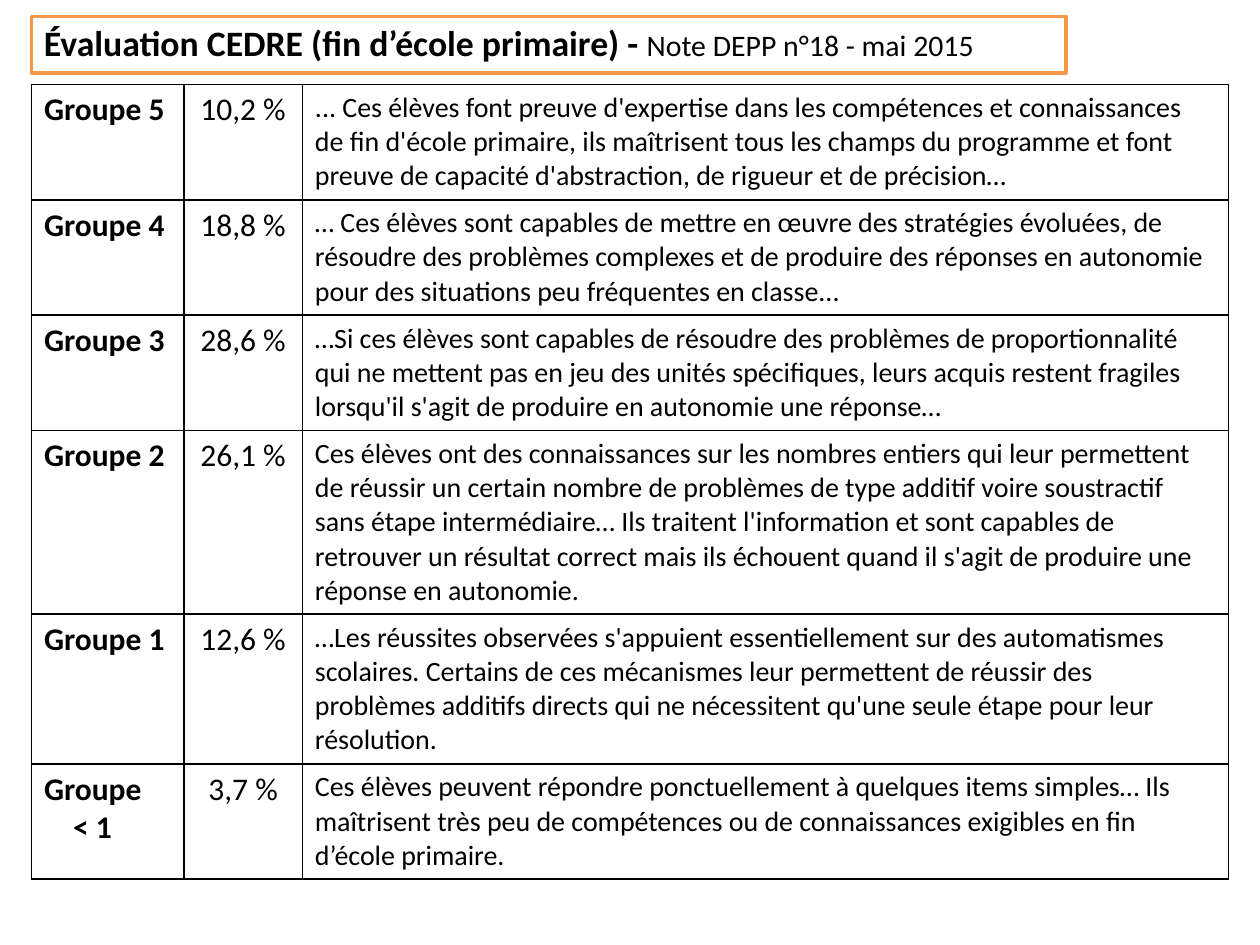
from lxml.etree import SubElement
from pptx import Presentation
from pptx.dml.color import RGBColor
from pptx.enum.shapes import MSO_SHAPE
from pptx.enum.text import MSO_ANCHOR, PP_ALIGN
from pptx.oxml.ns import qn
from pptx.util import Inches, Pt

WIDE, HIGH = 10, 7.5
HEX = {"ink": "000000", "paper": "FFFFFF", "frame": "F79646"}
COLS = (1.21, 0.94, 7.35)
LINE, PAD = 0.22, 0.11  # row height per text line, plus margin

# Label lines, share of pupils, number of text lines, description
ROWS = [
    (["Groupe 5"], "10,2 %", 3,
     "... Ces élèves font preuve d'expertise dans les compétences et connaissances "
     "de fin d'école primaire, ils maîtrisent tous les champs du programme et font "
     "preuve de capacité d'abstraction, de rigueur et de précision…"),
    (["Groupe 4"], "18,8 %", 3,
     "… Ces élèves sont capables de mettre en œuvre des stratégies évoluées, de "
     "résoudre des problèmes complexes et de produire des réponses en autonomie "
     "pour des situations peu fréquentes en classe..."),
    (["Groupe 3"], "28,6 %", 3,
     "…Si ces élèves sont capables de résoudre des problèmes de proportionnalité "
     "qui ne mettent pas en jeu des unités spécifiques, leurs acquis restent fragiles "
     "lorsqu'il s'agit de produire en autonomie une réponse…"),
    (["Groupe 2"], "26,1 %", 5,
     "Ces élèves ont des connaissances sur les nombres entiers qui leur permettent "
     "de réussir un certain nombre de problèmes de type additif voire soustractif "
     "sans étape intermédiaire… Ils traitent l'information et sont capables de "
     "retrouver un résultat correct mais ils échouent quand il s'agit de produire une "
     "réponse en autonomie."),
    (["Groupe 1"], "12,6 %", 4,
     "…Les réussites observées s'appuient essentiellement sur des automatismes "
     "scolaires. Certains de ces mécanismes leur permettent de réussir des "
     "problèmes additifs directs qui ne nécessitent qu'une seule étape pour leur "
     "résolution."),
    (["Groupe", "< 1"], "3,7 %", 3,
     "Ces élèves peuvent répondre ponctuellement à quelques items simples… Ils "
     "maîtrisent très peu de compétences ou de connaissances exigibles en fin "
     "d’école primaire."),
]


def color(name):
    return RGBColor.from_string(HEX[name])


def paint(part, name):
    part.fill.solid()
    part.fill.fore_color.rgb = color(name)


def write(para, text, size=16, bold=False, align=PP_ALIGN.LEFT, indent=0):
    para.alignment = align
    if indent:
        props = para._p.get_or_add_pPr()
        props.set("marL", str(Inches(indent)))
        props.set("indent", "0")
    run = para.add_run()
    run.text = text
    font = run.font
    font.name, font.size, font.bold = "Calibri", Pt(size), bold
    font.color.rgb = color("ink")


def border(cell, width=0.96):
    props = cell._tc.get_or_add_tcPr()
    for spot, side in enumerate(("a:lnL", "a:lnR", "a:lnT", "a:lnB")):
        line = SubElement(props, qn(side), w=str(Pt(width)))
        fill = SubElement(line, qn("a:solidFill"))
        SubElement(fill, qn("a:srgbClr"), val=HEX["ink"])
        props.insert(spot, line)  # borders precede the cell fill


def title(slide, box):
    shape = slide.shapes.add_shape(MSO_SHAPE.RECTANGLE, *map(Inches, box))
    shape.shadow.inherit = False
    paint(shape, "paper")
    shape.line.color.rgb = color("frame")
    shape.line.width = Pt(2)
    frame = shape.text_frame
    frame.word_wrap = True
    frame.vertical_anchor = MSO_ANCHOR.MIDDLE
    para = frame.paragraphs[0]
    para.line_spacing = 0.9
    para.space_before = Pt(4.8)
    write(para, "Évaluation CEDRE (fin d’école primaire) - ", size=20.4, bold=True)
    write(para, "Note DEPP n°18 - mai 2015", size=17)


def groups(slide, box):
    holder = slide.shapes.add_table(len(ROWS), len(COLS), *map(Inches, box))
    table = holder.table
    table.first_row = table.horz_banding = False
    for col, share in zip(table.columns, COLS):
        col.width = Inches(box[2] * share / sum(COLS))
    for row, (label, rate, count, note) in zip(table.rows, ROWS):
        row.height = Inches(PAD + LINE * count)
        for cell in row.cells:
            paint(cell, "paper")
            border(cell)
        head, mid, body = (cell.text_frame for cell in row.cells)
        # Label, with any second line indented
        write(head.paragraphs[0], label[0], size=18, bold=True)
        for text in label[1:]:
            write(head.add_paragraph(), text, size=18, bold=True, indent=0.23)
        write(mid.paragraphs[0], rate, size=18, align=PP_ALIGN.CENTER)
        write(body.paragraphs[0], note)
    holder.height = Inches(box[3])


def main():
    deck = Presentation()
    deck.slide_width, deck.slide_height = Inches(WIDE), Inches(HIGH)
    slide = deck.slides.add_slide(deck.slide_layouts[6])
    paint(slide.background, "paper")
    edge = WIDE * 0.025
    title(slide, (edge, 0.13, 8.21, 0.45))
    groups(slide, (edge, 0.67, WIDE - 2 * edge, 6.2))
    deck.save("out.pptx")


if __name__ == "__main__":
    main()
